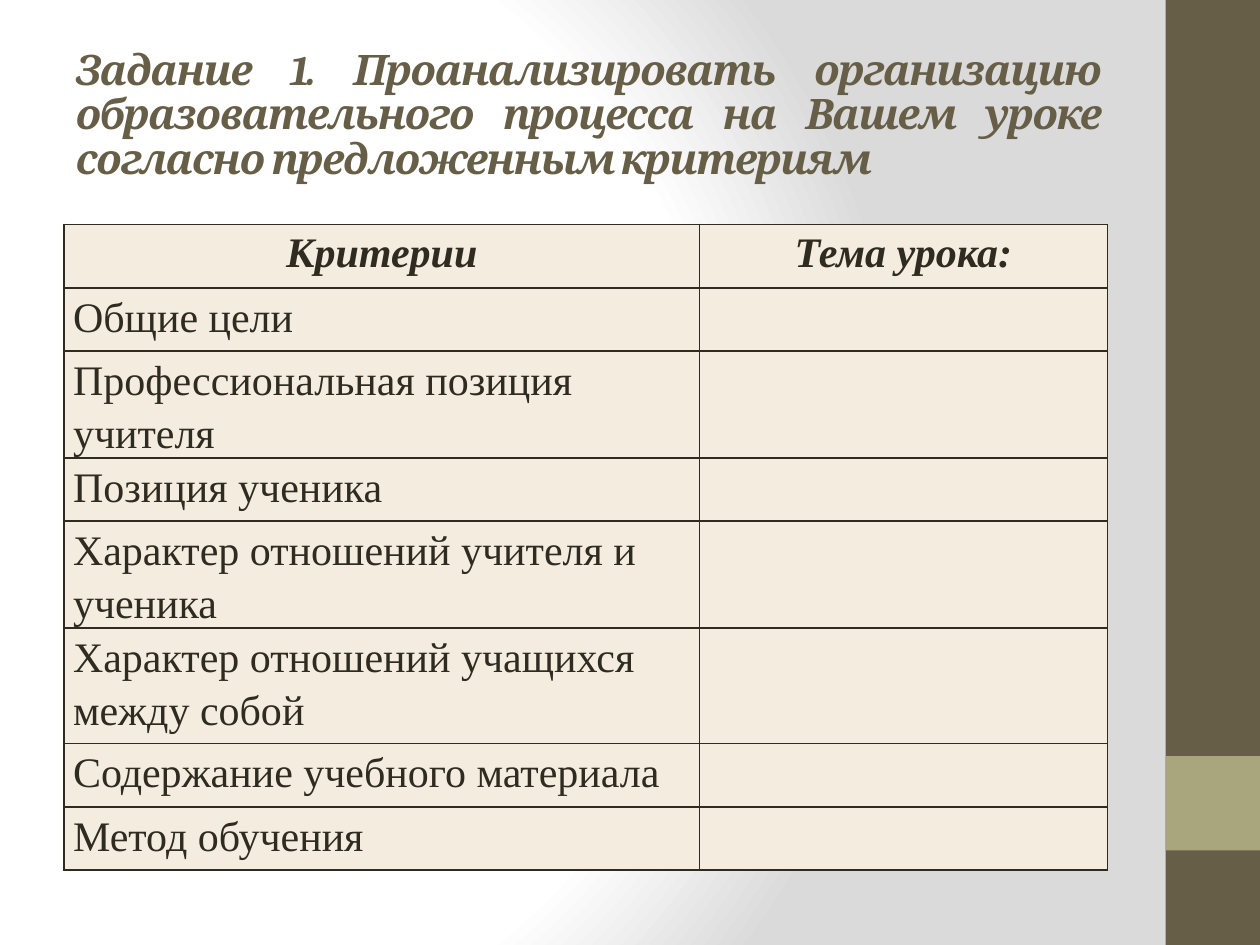
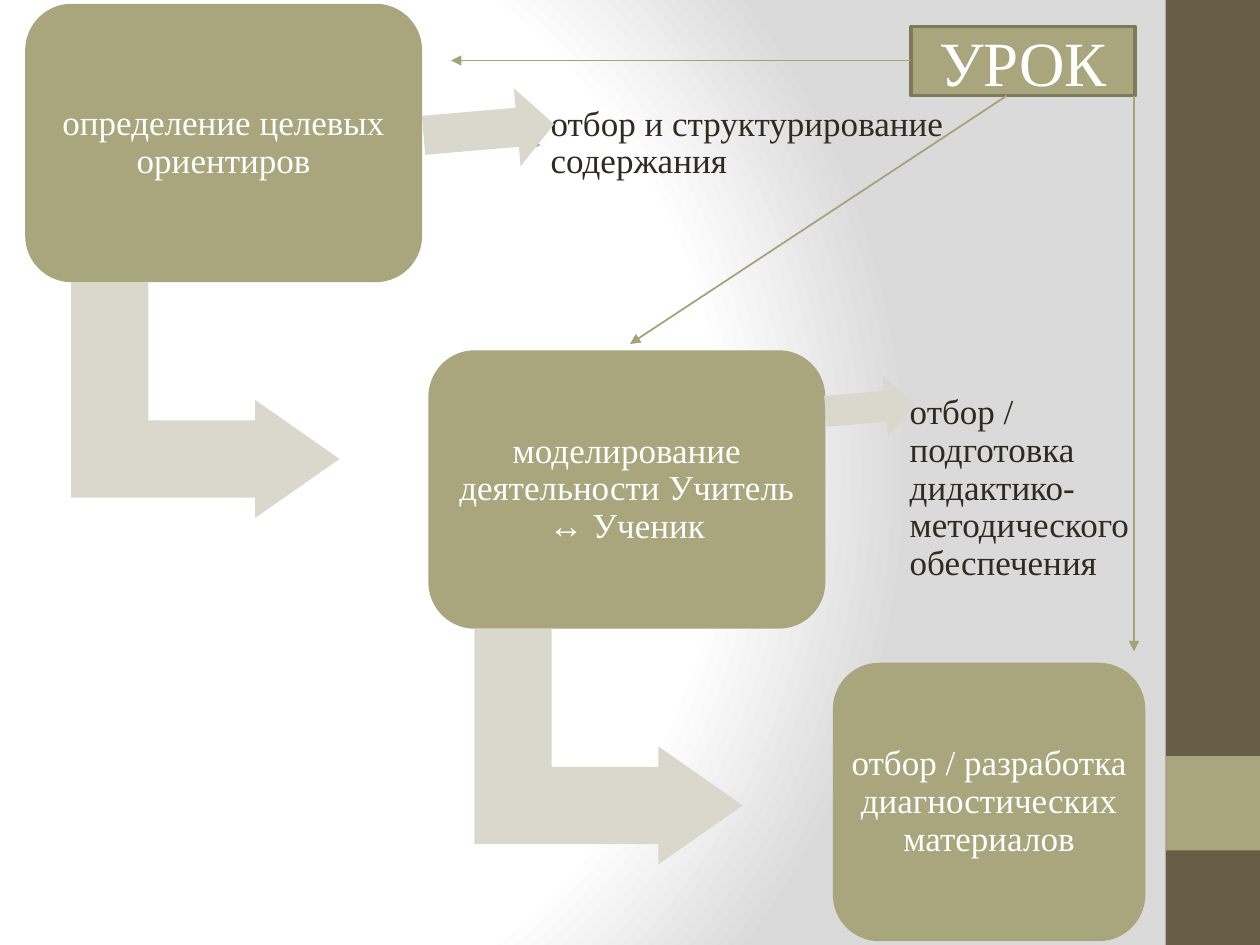
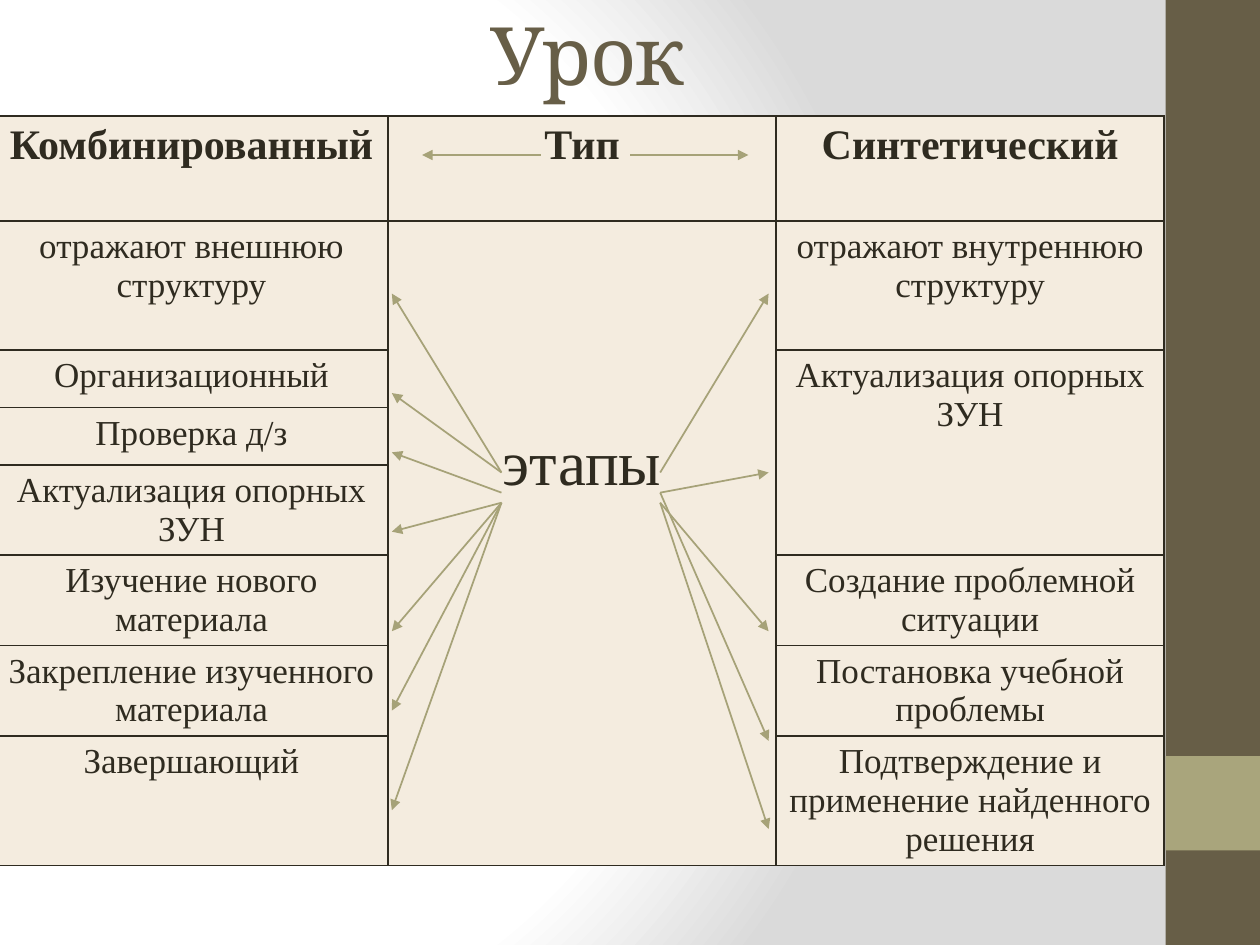
from dataclasses import dataclass

from pptx import Presentation
from pptx.dml.color import RGBColor
from pptx.enum.shapes import MSO_CONNECTOR, MSO_SHAPE
from pptx.enum.text import MSO_ANCHOR, MSO_AUTO_SIZE, PP_ALIGN
from pptx.oxml import parse_xml
from pptx.oxml.ns import nsdecls
from pptx.util import Emu, Inches, Pt

RECT = MSO_SHAPE.RECTANGLE
ROUNDED = MSO_SHAPE.ROUNDED_RECTANGLE
BENT_ARROW = MSO_SHAPE.BENT_UP_ARROW
RIGHT_ARROW = MSO_SHAPE.RIGHT_ARROW
STRAIGHT = MSO_CONNECTOR.STRAIGHT
LEFT, CENTER, JUSTIFY = PP_ALIGN.LEFT, PP_ALIGN.CENTER, PP_ALIGN.JUSTIFY
MIDDLE = MSO_ANCHOR.MIDDLE
NO_FIT = MSO_AUTO_SIZE.NONE

WIDTH, HEIGHT = Inches(10), Inches(7.5)
COLUMNS = 100
TITLE_ONLY, BLANK = 5, 6


@dataclass(frozen=True)
class Theme:
    heading: str = "Cambria"
    body: str = "Times New Roman"
    dark: str = "675E47"
    olive: str = "A9A57C"
    olive_edge: str = "7D7A5C"
    arrow: str = "A6A278"
    pale: str = "DAD8CC"
    cream: str = "F4ECDF"
    ink: str = "2F2B20"
    white: str = "FFFFFF"
    backdrop: str = "DADADA"
    display_size: int = 46
    label_size: int = 36
    large_size: int = 24
    text_size: int = 20


THEME = Theme()

CRITERIA = [
    ["Критерии", "Тема урока:"],
    ["Общие цели", ""],
    ["Профессиональная позиция учителя", ""],
    ["Позиция ученика", ""],
    ["Характер отношений учителя и ученика", ""],
    ["Характер отношений учащихся между собой", ""],
    ["Содержание учебного материала", ""],
    ["Метод обучения", ""],
]

LESSON_TYPES = [
    ["Комбинированный", "Тип", "Синтетический"],
    ["отражают внешнюю структуру", "этапы", "отражают внутреннюю структуру"],
    ["Организационный", None, "Актуализация опорных ЗУН"],
    ["Проверка д/з", None, None],
    ["Актуализация опорных ЗУН", None, None],
    ["Изучение нового материала", None, "Создание проблемной ситуации"],
    ["Закрепление изученного материала", None, "Постановка учебной проблемы"],
    ["Завершающий", None, "Подтверждение и применение найденного решения"],
]


def grid(*cells):
    return [Emu(round(cell * WIDTH / COLUMNS)) for cell in cells]


def rgb(color):
    return RGBColor.from_string(color)


def style_paragraph(paragraph, size, color=THEME.ink, align=CENTER, font=THEME.body,
                    bold=False, italic=False, spacing=None):
    paragraph.alignment = align
    if spacing:
        paragraph.line_spacing = spacing
    for run in paragraph.runs:
        run.font.name = font
        run.font.size = Pt(size)
        run.font.bold = bold
        run.font.italic = italic
        run.font.color.rgb = rgb(color)


def set_margins(holder, horizontal, vertical):
    holder.margin_left = holder.margin_right = Inches(horizontal)
    holder.margin_top = holder.margin_bottom = Inches(vertical)


def add_block(slide, kind, place, fill, edge=None, turn=0, adjust=()):
    block = slide.shapes.add_shape(kind, *grid(*place))
    block.shadow.inherit = False
    block.rotation = turn
    for index, value in enumerate(adjust):
        block.adjustments[index] = value
    block.fill.solid()
    block.fill.fore_color.rgb = rgb(fill)
    if edge:
        block.line.color.rgb = rgb(edge)
        block.line.width = Pt(2)
    else:
        block.line.fill.background()
    return block


def write_label(block, text, size, spacing=None):
    frame = block.text_frame
    frame.word_wrap = True
    frame.vertical_anchor = MIDDLE
    set_margins(frame, 0.03, 0.05)
    frame.text = text
    style_paragraph(frame.paragraphs[0], size, THEME.white, spacing=spacing)


def add_bullet(slide, place, text):
    frame = slide.shapes.add_textbox(*grid(*place)).text_frame
    frame.word_wrap = True
    frame.vertical_anchor = MIDDLE
    set_margins(frame, 0.08, 0.08)
    frame.text = text
    paragraph = frame.paragraphs[0]
    style_paragraph(paragraph, THEME.text_size, align=LEFT, spacing=0.9)
    properties = paragraph._p.get_or_add_pPr()
    properties.set("marL", str(Inches(0.25)))
    properties.set("indent", str(-Inches(0.25)))
    properties.append(parse_xml(f'<a:buChar {nsdecls("a")} char="•"/>'))


def add_arrow(slide, start, end):
    arrow = slide.shapes.add_connector(STRAIGHT, *grid(*start, *end))
    arrow.line.color.rgb = rgb(THEME.arrow)
    arrow.line.width = Pt(1)
    arrow.line._get_or_add_ln().append(
        parse_xml(f'<a:tailEnd {nsdecls("a")} type="triangle"/>'))
    arrow._element.spPr.append(parse_xml(f'<a:effectLst {nsdecls("a")}/>'))


def set_title(slide, place, text, size, align, emphasis=False):
    title = slide.shapes.title
    title.left, title.top, title.width, title.height = grid(*place)
    frame = title.text_frame
    frame.auto_size = NO_FIT
    frame.vertical_anchor = MIDDLE
    frame.text = text
    paragraph = frame.paragraphs[0]
    style_paragraph(paragraph, size, THEME.dark, align, THEME.heading,
                    emphasis, emphasis, 0.88)
    paragraph.runs[0].font._element.set("spc", "-100")


def outline_cell(cell):
    properties = cell._tc.get_or_add_tcPr()
    for side in ("lnL", "lnR", "lnT", "lnB"):
        properties.append(parse_xml(
            f'<a:{side} {nsdecls("a")} w="{Pt(1)}"><a:solidFill>'
            f'<a:srgbClr val="{THEME.ink}"/></a:solidFill></a:{side}>'))


def merge_down(table, content):
    for column in range(len(content[0])):
        anchor = 0
        for row in range(1, len(content) + 1):
            if row == len(content) or content[row][column] is not None:
                if row - anchor > 1:
                    table.cell(anchor, column).merge(table.cell(row - 1, column))
                anchor = row


def add_grid_table(slide, corner, widths, heights, content, style_cell):
    table = slide.shapes.add_table(
        len(content), len(widths), *grid(*corner, sum(widths), sum(heights))).table
    table.first_row = table.horz_banding = False
    for column, width in zip(table.columns, grid(*widths)):
        column.width = width
    for row, height in zip(table.rows, grid(*heights)):
        row.height = height
    for row, texts in enumerate(content):
        for column, text in enumerate(texts):
            cell = table.cell(row, column)
            outline_cell(cell)
            cell.fill.solid()
            cell.fill.fore_color.rgb = rgb(THEME.cream)
            if text:
                cell.text_frame.text = text
                style_cell(cell, row, column)
    merge_down(table, content)


def style_criterion(cell, row, column):
    paragraph = cell.text_frame.paragraphs[0]
    if row == 0:
        style_paragraph(paragraph, THEME.large_size, bold=True, italic=True)
    else:
        set_margins(cell, 0.07, 0)
        style_paragraph(paragraph, THEME.large_size, align=LEFT, spacing=1.15)


def style_stage(cell, row, column):
    paragraph = cell.text_frame.paragraphs[0]
    if row == 0:
        style_paragraph(paragraph, THEME.large_size, bold=True)
    elif column == 1:
        cell.margin_top = Inches(1.65)
        style_paragraph(paragraph, THEME.label_size)
    else:
        style_paragraph(paragraph, THEME.text_size)


def dress_master(master, slide):
    master.background.fill.gradient()
    gradient = master.element.xpath(".//p:bgPr/a:gradFill")[0]
    stops = "".join(
        f'<a:gs pos="{share * 1000}"><a:srgbClr val="{color}"/></a:gs>'
        for share, color in ((0, THEME.white), (75, THEME.white), (100, THEME.backdrop)))
    gradient.getparent().replace(gradient, parse_xml(
        f'<a:gradFill {nsdecls("a")} rotWithShape="1"><a:gsLst>{stops}</a:gsLst>'
        '<a:path path="circle"><a:fillToRect l="20000" t="50000" r="100000" b="50000"/>'
        '</a:path></a:gradFill>'))
    bands = (((92.5, 0, 7.5, 75), THEME.dark), ((92.5, 60, 7.5, 7.5), THEME.olive))
    for index, (place, color) in enumerate(bands):
        band = add_block(slide, RECT, place, color).element
        band.xpath(".//p:cNvPr")[0].set("id", str(100 + index))
        master.shapes.element.insert(2 + index, band)


def build_criteria(slide):
    set_title(slide, (5, 3, 83.3, 12.5),
              "Задание 1. Проанализировать организацию образовательного процесса "
              "на Вашем уроке согласно предложенным критериям",
              THEME.large_size, JUSTIFY, True)
    add_grid_table(slide, (5.1, 17.8), (50.4, 32.4),
                   (5.05, 5, 8.5, 5, 8.5, 9.15, 5.05, 5), CRITERIA, style_criterion)


def build_lesson_steps(slide):
    steps = (
        (2, 0.3, 31.5, "определение целевых ориентиров"),
        (34, 27.8, 31.5, "моделирование деятельности Учитель ↔ Ученик"),
        (66.1, 52.6, 24.8, "отбор / разработка диагностических материалов"),
    )
    for left, top, width, text in steps:
        step = add_block(slide, ROUNDED, (left, top, width, 22.1), THEME.olive,
                         adjust=(0.167,))
        write_label(step, text, THEME.text_size, 0.9)
    for left, top, *_ in steps[:-1]:
        add_block(slide, BENT_ARROW, (left + 4.95, top + 20.8, 18.7, 21.3), THEME.pale,
                  turn=90, adjust=(0.328, 0.25, 0.358))
    add_bullet(slide, (40.4, 8.1, 47.7, 6.6), "отбор и структурирование содержания")
    add_bullet(slide, (68.9, 25.1, 25.8, 27.4),
               "отбор / подготовка дидактико-методического обеспечения")
    lesson = add_block(slide, RECT, (72.3, 2.1, 17.8, 5.5), THEME.olive, THEME.olive_edge)
    write_label(lesson, "УРОК", THEME.label_size)
    for start, end in (
        ((34.3, 11.5), (42.9, 11.5)),
        ((66.5, 32.8), (70.5, 32.8)),
        ((72.3, 4.8), (35.8, 4.8)),
        ((79.9, 7.6), (50, 27.3)),
        ((90, 7.6), (90, 51.7)),
    ):
        add_arrow(slide, start, end)
    for place in ((33.6, 7.2, 10.4, 6.2), (65.5, 29.9, 7.1, 4.9)):
        add_block(slide, RIGHT_ARROW, place, THEME.pale, turn=355.1, adjust=(0.5, 0.474))


def build_lesson_types(slide):
    set_title(slide, (5, 1.3, 83.3, 6.9), "Урок", THEME.display_size, CENTER)
    add_grid_table(slide, (-0.4, 9.2), (31.2, 30.8, 30.8),
                   (8.35, 10.25, 4.55, 4.55, 7.15, 7.15, 7.15, 10.3),
                   LESSON_TYPES, style_stage)
    for start, end in ((42.9, 33.5), (50, 59.4)):
        add_arrow(slide, (start, 12.3), (end, 12.3))
    synthetic = ((37.5, 23.3), (39.1, 37.5), (39.9, 50.1), (39.1, 58.8), (39.9, 65.8))
    combined = ((37.5, 23.3), (37.5, 31.2), (39.1, 35.9), (39.9, 42.2),
                (39.9, 50.1), (39.9, 56.4), (39.9, 64.3))
    for origin, target, fan in ((52.4, 61, synthetic), (39.8, 31.1, combined)):
        for start, end in fan:
            add_arrow(slide, (origin, start), (target, end))


def main():
    deck = Presentation()
    deck.slide_width, deck.slide_height = WIDTH, HEIGHT
    pages = ((TITLE_ONLY, build_criteria), (BLANK, build_lesson_steps),
             (TITLE_ONLY, build_lesson_types))
    for layout, build in pages:
        slide = deck.slides.add_slide(deck.slide_layouts[layout])
        if build is build_criteria:
            dress_master(deck.slide_master, slide)
        build(slide)
    deck.save("out.pptx")


if __name__ == "__main__":
    main()
